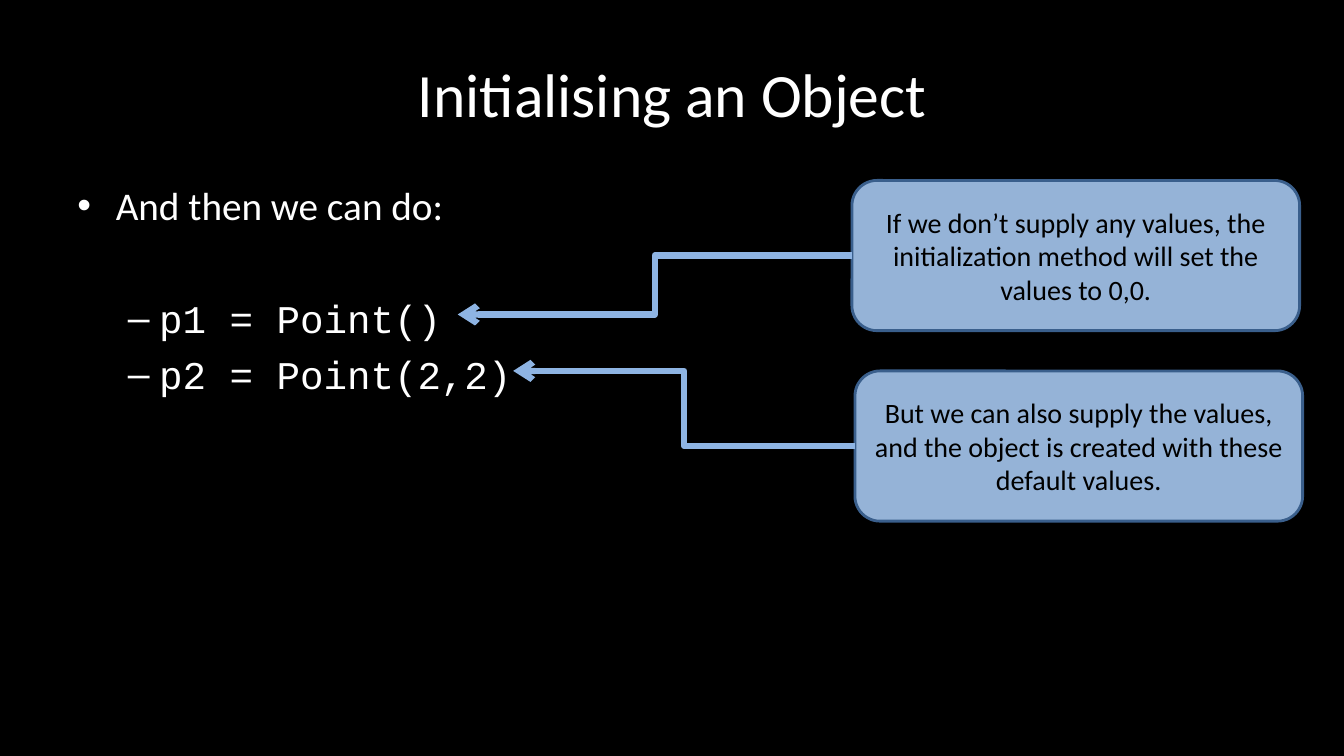
import pptx
import pptx.dml.color
import pptx.enum.shapes
import pptx.enum.text
import pptx.oxml.ns
import pptx.util
from lxml import etree
from pptx.util import Inches

CENTER = pptx.enum.text.PP_ALIGN.CENTER
MIDDLE = pptx.enum.text.MSO_ANCHOR.MIDDLE


def rgb(value):
    return pptx.dml.color.RGBColor.from_string(value)


def sub(parent, tag, **attrs):
    return etree.SubElement(parent, pptx.oxml.ns.qn(tag), **attrs)


def style(p, text, size, color, font="Calibri"):
    p.text = text
    p.font.size = pptx.util.Pt(size)
    p.font.name = font
    p.font.color.rgb = rgb(color)


def add_text_box(s, left, top, width, height):
    tf = s.shapes.add_textbox(Inches(left), Inches(top), Inches(width), Inches(height)).text_frame
    tf.word_wrap = True
    return tf


def add_title(s, text):
    tf = add_text_box(s, 0.67, 0.3, 12, 1.25)
    tf.vertical_anchor = MIDDLE
    p = tf.paragraphs[0]
    style(p, text, 44, "FFFFFF")
    p.alignment = CENTER


def add_bullets(s, items):
    tf = add_text_box(s, 0.67, 1.75, 11.75, 4.95)
    for i, (text, font, bullet, margin, hanging, before) in enumerate(items):
        p = tf.add_paragraph() if i else tf.paragraphs[0]
        style(p, text, 28, "FFFFFF", font)
        p.space_before = pptx.util.Pt(before)
        pPr = p._p.get_or_add_pPr()
        pPr.set("marL", str(Inches(margin)))
        pPr.set("indent", str(-Inches(hanging)))
        defaults = pPr.find(pptx.oxml.ns.qn("a:defRPr"))
        for tag, attrs in (("a:buFont", {"typeface": "Arial"}), ("a:buChar", {"char": bullet})):
            defaults.addprevious(sub(pPr, tag, **attrs))


def add_callout(s, text, left, top, width=4.44, height=1.49):
    sp = s.shapes.add_shape(pptx.enum.shapes.MSO_SHAPE.ROUNDED_RECTANGLE,
                            Inches(left), Inches(top), Inches(width), Inches(height))
    sp.shadow.inherit = False
    sp.fill.solid()
    sp.fill.fore_color.rgb = rgb("95B3D7")
    sp.line.color.rgb = rgb("3A5F8C")
    sp.line.width = pptx.util.Pt(2)
    tf = sp.text_frame
    tf.word_wrap = True
    tf.vertical_anchor = MIDDLE
    p = tf.paragraphs[0]
    style(p, text, 20, "000000")
    p.alignment = CENTER
    return sp


def add_arrow(s, callout, x, y):
    c = s.shapes.add_connector(pptx.enum.shapes.MSO_CONNECTOR.ELBOW,
                               callout.left, callout.top + callout.height // 2,
                               Inches(x), Inches(y))
    c.line.color.rgb = rgb("8EB4E3")
    c.line.width = pptx.util.Pt(4.5)
    sub(c.line._get_or_add_ln(), "a:tailEnd", type="arrow")
    sub(c._element.spPr, "a:effectLst")


def main():
    prs = pptx.Presentation()
    prs.slide_width, prs.slide_height = Inches(13.33), Inches(7.5)
    s = prs.slides.add_slide(prs.slide_layouts[6])
    s.background.fill.solid()
    s.background.fill.fore_color.rgb = rgb("000000")
    add_title(s, "Initialising an Object")
    add_bullets(s, [
        ("And then we can do:", "Calibri", "•", 0.38, 0.38, 6.7),
        ("p1 = Point()", "Courier New", "–", 0.81, 0.31, 47),
        ("p2 = Point(2,2)", "Courier New", "–", 0.81, 0.31, 6.7),
    ])
    for text, left, top, x, y in (
        ("If we don’t supply any values, the initialization method will set the values to 0,0.",
         8.45, 1.79, 4.54, 3.12),
        ("But we can also supply the values, and the object is created with these default values.",
         8.48, 3.68, 5.09, 3.68),
    ):
        add_arrow(s, add_callout(s, text, left, top), x, y)
    prs.save("out.pptx")


if __name__ == "__main__":
    main()
